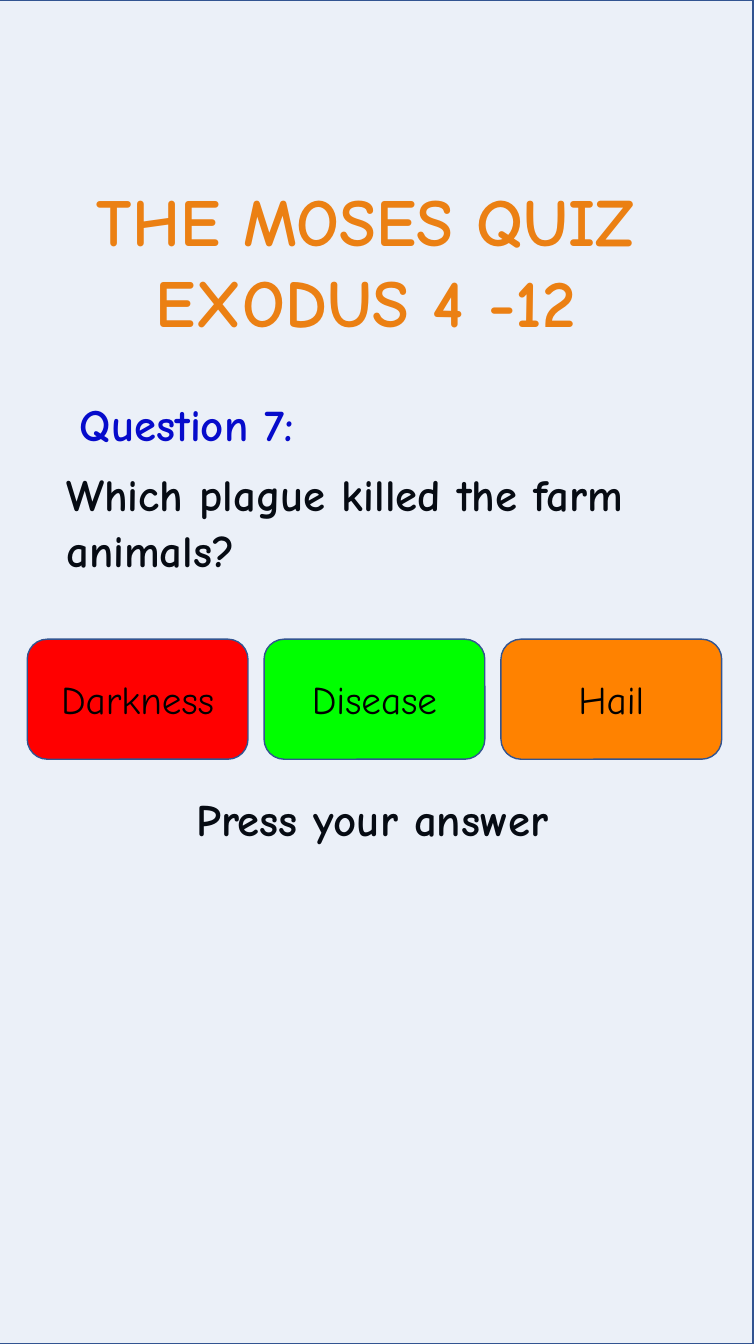
from dataclasses import dataclass

from lxml.etree import SubElement
from pptx import Presentation
from pptx.dml.color import RGBColor
from pptx.enum.shapes import MSO_SHAPE as Shape
from pptx.enum.text import MSO_ANCHOR as Anchor, MSO_AUTO_SIZE as AutoSize, PP_ALIGN as Align
from pptx.oxml.ns import qn
from pptx.util import Inches, Pt

SLIDE_W, SLIDE_H = Inches(7.5), Inches(13.33)


@dataclass(frozen=True)
class Theme:
    font: str = "Comic Neue"
    orange: str = "FF8200"
    blue: str = "0000CC"
    black: str = "000000"
    red: str = "FF0000"
    green: str = "00FF00"
    tint: str = "4472C4"
    border: str = "325491"
    title_size: int = 48
    body_size: int = 32
    answer_size: int = 28


THEME = Theme()


def area(left, top, width, height):
    """Turn percentages of the slide into a position and size."""
    return (int(SLIDE_W * left / 100), int(SLIDE_H * top / 100),
            int(SLIDE_W * width / 100), int(SLIDE_H * height / 100))


def write(frame, lines, size, color, bold=True, align=Align.LEFT,
          anchor=Anchor.TOP, wrap=True, spacing=None, before=0):
    frame.auto_size = AutoSize.NONE
    frame.word_wrap = wrap
    frame.vertical_anchor = anchor
    for number, line in enumerate(lines):
        paragraph = frame.add_paragraph() if number else frame.paragraphs[0]
        paragraph.alignment = align
        paragraph.space_before = Pt(before)
        paragraph.line_spacing = spacing
        run = paragraph.add_run()
        run.text = line
        run.font.name = THEME.font
        run.font.size = Pt(size)
        run.font.bold = bold
        run.font.color.rgb = RGBColor.from_string(color)


def add_title(slide, box, lines):
    title = slide.shapes.title
    title.left, title.top, title.width, title.height = box
    write(title.text_frame, lines, THEME.title_size, THEME.orange,
          align=Align.CENTER, wrap=False)


def add_body(slide, box, text, color=THEME.black, **layout):
    frame = slide.shapes.add_textbox(*box).text_frame
    write(frame, [text], THEME.body_size, color, **layout)


def add_panel(slide, kind, box, fill):
    panel = slide.shapes.add_shape(kind, *box)
    panel.shadow.inherit = False
    panel.fill.solid()
    panel.fill.fore_color.rgb = RGBColor.from_string(fill)
    panel.line.color.rgb = RGBColor.from_string(THEME.border)
    panel.line.width = Pt(1)
    return panel


def add_tint(slide, box, opacity):
    tint = add_panel(slide, Shape.RECTANGLE, box, THEME.tint)
    color = tint.fill._xPr.find(qn("a:solidFill"))[0]
    SubElement(color, qn("a:alpha")).set("val", str(opacity * 1000))


def add_answer(slide, column, text, fill):
    box = area(3.6 + 31.33 * column, 47.56, 29.2, 8.93)
    button = add_panel(slide, Shape.ROUNDED_RECTANGLE, box, fill)
    write(button.text_frame, [text], THEME.answer_size, THEME.black,
          bold=False, align=Align.CENTER, anchor=Anchor.MIDDLE)


def main():
    deck = Presentation()
    deck.slide_width, deck.slide_height = SLIDE_W, SLIDE_H
    slide = deck.slides.add_slide(deck.slide_layouts[5])

    # Heading and question
    add_title(slide, area(4, 12.98, 91.87, 12.9),
              ["THE MOSES QUIZ ", "EXODUS 4 -12 "])
    add_body(slide, area(6.27, 29.18, 36.93, 4.8), "Question 7:", THEME.blue,
             align=Align.CENTER, wrap=False)
    add_body(slide, area(7.47, 34.21, 84.8, 10.95),
             "Which plague killed the farm animals?", spacing=Pt(40), before=7.5)
    add_body(slide, area(24.67, 58.96, 56.27, 5.4), "Press your answer",
             spacing=0.9, before=7.5)

    # Pale wash over the whole slide
    add_tint(slide, area(-0.4, 0, 100, 100), opacity=10)

    # Answer buttons
    answers = [("Darkness", THEME.red), ("Disease", THEME.green), ("Hail", THEME.orange)]
    for column, (text, fill) in enumerate(answers):
        add_answer(slide, column, text, fill)

    deck.save("out.pptx")


if __name__ == "__main__":
    main()
